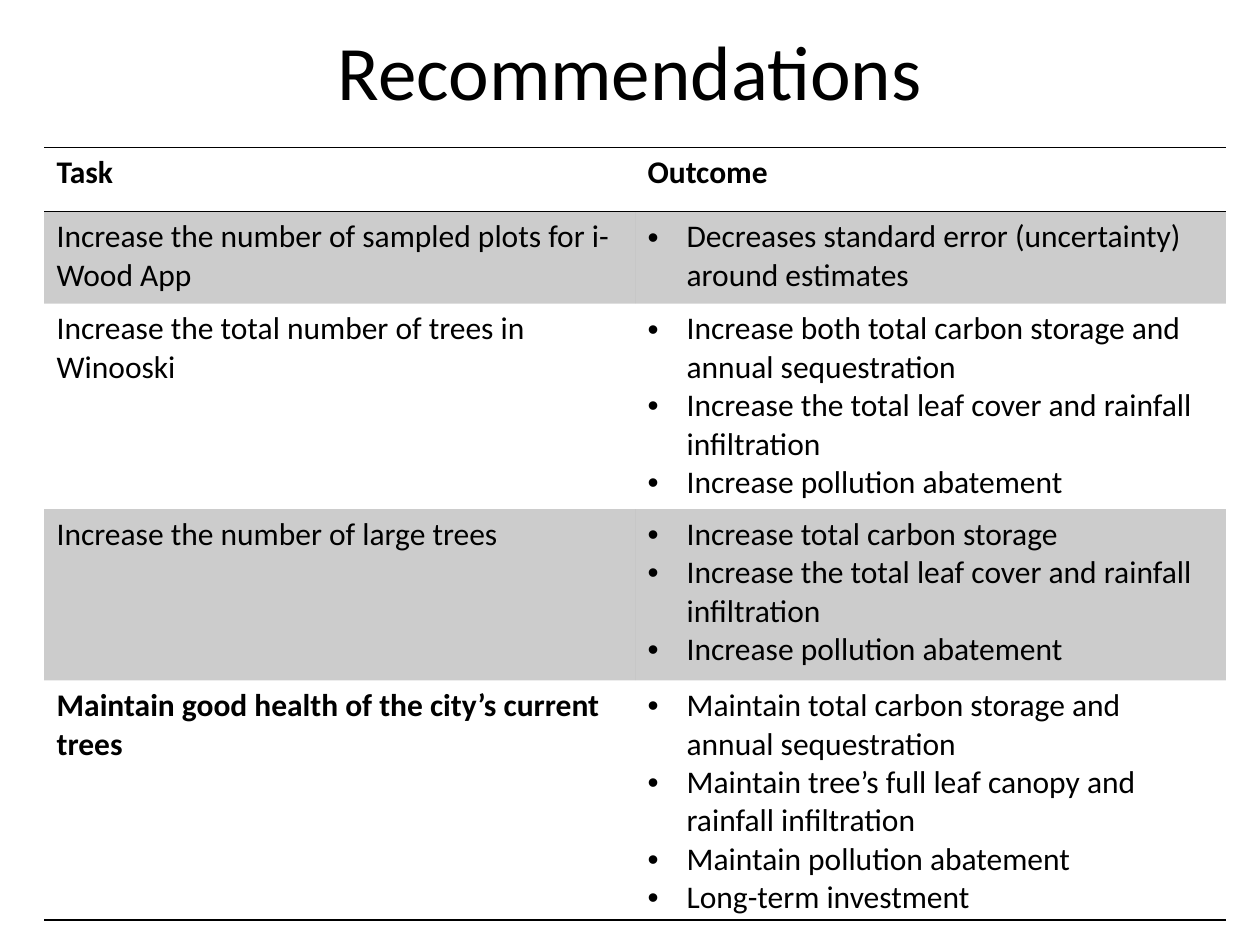
from lxml.etree import SubElement as add_element
from pptx import Presentation
from pptx.dml.color import RGBColor
from pptx.enum.text import MSO_ANCHOR as Anchor, PP_ALIGN as Align
from pptx.oxml.ns import qn
from pptx.util import Inches, Pt

COLORS = {"text": "000000", "rule": "000000", "band": "000000"}
PLAIN_TABLE_STYLE = "{2D5ABB26-0587-4C30-8999-92F81FD0307C}"
LEAF_COVER = "Increase the total leaf cover and rainfall infiltration"
POLLUTION = "Increase pollution abatement"
HEADERS = ("Task", "Outcome")
RECOMMENDATIONS = [
    ("Increase the number of sampled plots for i-Wood App",
     ["Decreases standard error (uncertainty) around estimates"]),
    ("Increase the total number of trees in Winooski",
     ["Increase both total carbon storage and annual sequestration", LEAF_COVER, POLLUTION]),
    ("Increase the number of large trees",
     ["Increase total carbon storage", LEAF_COVER, POLLUTION]),
    ("Maintain good health of the city’s current trees",
     ["Maintain total carbon storage and annual sequestration",
      "Maintain tree’s full leaf canopy and rainfall infiltration",
      "Maintain pollution abatement", "Long-term investment"]),
]
ROW_HEIGHTS = (0.51, 0.73, 1.63, 1.36, 1.61)


class SlideBuilder:
    """Holds the style and the current slide and adds its elements."""

    def __init__(self, slide, font="Calibri"):
        self.slide = slide
        self.font = font

    def format_runs(self, paragraph, size, bold=False):
        for run in paragraph.runs:
            run.font.name = self.font
            run.font.size = Pt(size)
            run.font.bold = bold
            run.font.color.rgb = RGBColor.from_string(COLORS["text"])

    def title(self, text, left, top, width, height):
        shape = self.slide.shapes.add_textbox(
            Inches(left), Inches(top), Inches(width), Inches(height))
        text_frame = shape.text_frame
        text_frame.word_wrap = True
        text_frame.vertical_anchor = Anchor.MIDDLE
        text_frame.text = text
        paragraph = text_frame.paragraphs[0]
        paragraph.alignment = Align.CENTER
        self.format_runs(paragraph, 44)

    def table(self, left, top, column_width, row_heights):
        shape = self.slide.shapes.add_table(
            len(row_heights), 2, Inches(left), Inches(top),
            Inches(2 * column_width), Inches(sum(row_heights)))
        table = shape.table
        table.first_row = table.horz_banding = False
        shape._element.find(".//" + qn("a:tableStyleId")).text = PLAIN_TABLE_STYLE
        for column in table.columns:
            column.width = Inches(column_width)
        for row, height in zip(table.rows, row_heights):
            row.height = Inches(height)
        return table

    def cell(self, cell, lines, bold=False, bulleted=False, rules=(), banded=False):
        cell.text_frame.text = "\n".join(lines)
        for paragraph in cell.text_frame.paragraphs:
            self.format_runs(paragraph, 18, bold)
            if bulleted:
                self.bullet(paragraph)
        for side in rules:
            self.rule(cell, side)
        if banded:
            self.band(cell)
        else:
            cell.fill.background()

    def bullet(self, paragraph, indent=Inches(0.31)):
        properties = paragraph._p.get_or_add_pPr()
        properties.set("marL", str(indent))
        properties.set("indent", str(-indent))
        add_element(properties, qn("a:buFont"), typeface="Arial")
        add_element(properties, qn("a:buChar"), char="•")

    def rule(self, cell, side):
        properties = cell._tc.get_or_add_tcPr()
        line = add_element(properties, qn("a:ln" + side), w=str(Pt(1)))
        fill = add_element(line, qn("a:solidFill"))
        add_element(fill, qn("a:srgbClr"), val=COLORS["rule"])

    def band(self, cell):
        cell.fill.solid()
        cell.fill.fore_color.rgb = RGBColor.from_string(COLORS["band"])
        color = cell._tc.tcPr.find(qn("a:solidFill")).find(qn("a:srgbClr"))
        add_element(color, qn("a:alpha"), val="20000")


def main():
    presentation = Presentation()
    presentation.slide_width, presentation.slide_height = Inches(10), Inches(7.5)
    builder = SlideBuilder(presentation.slides.add_slide(presentation.slide_layouts[6]))
    builder.title("Recommendations", 0.5, 0.13, 9, 0.85)
    table = builder.table(0.35, 1.17, 4.69, ROW_HEIGHTS)
    for column, header in enumerate(HEADERS):
        builder.cell(table.cell(0, column), [header], bold=True, rules="TB")
    for row, (task, outcomes) in enumerate(RECOMMENDATIONS, start=1):
        is_last = row == len(RECOMMENDATIONS)
        look = {"rules": "B" if is_last else "", "banded": row % 2 == 1}
        builder.cell(table.cell(row, 0), [task], bold=is_last, **look)
        builder.cell(table.cell(row, 1), outcomes, bulleted=True, **look)
    presentation.save("out.pptx")


if __name__ == "__main__":
    main()
